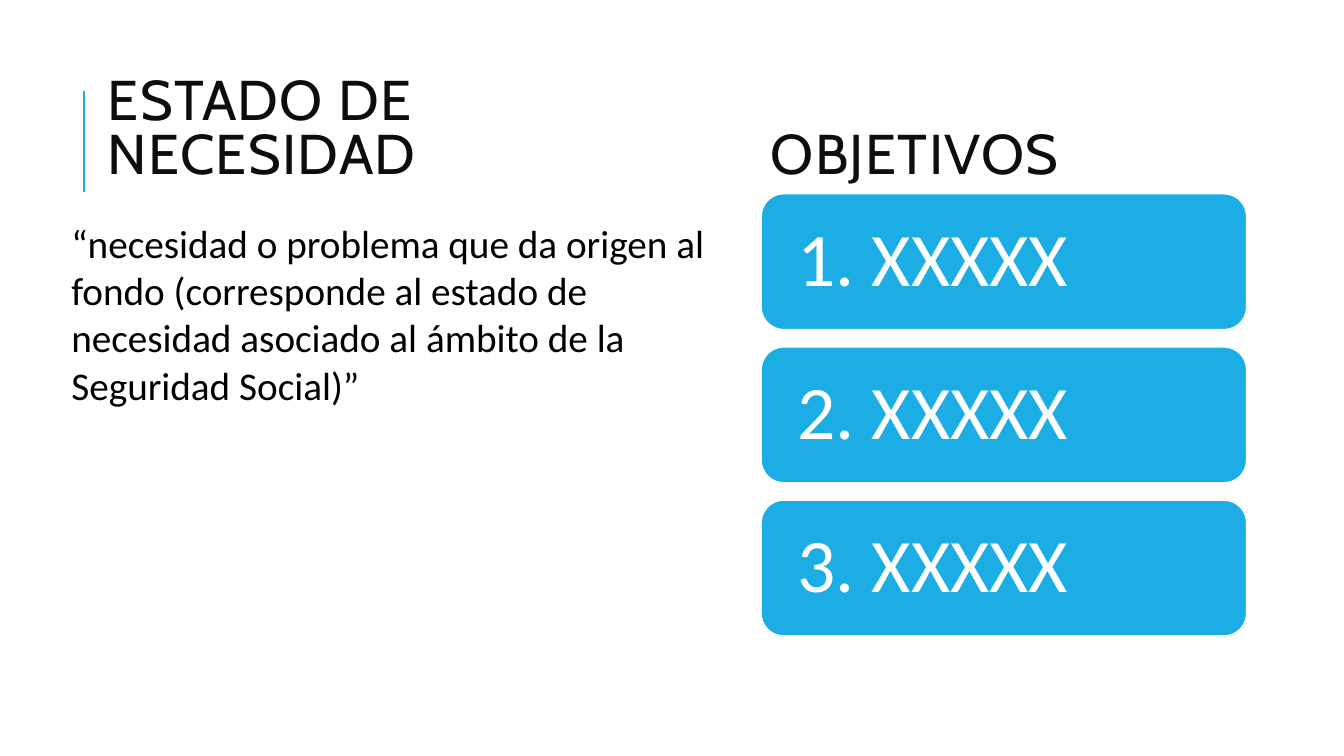
"""Build the slide on the state of need and its objectives."""
import pptx
import pptx.util
from pptx.dml.color import RGBColor
from pptx.enum.shapes import MSO_CONNECTOR, MSO_SHAPE
from pptx.enum.text import MSO_ANCHOR, MSO_AUTO_SIZE, PP_ALIGN
from pptx.oxml.xmlchemy import OxmlElement
from pptx.util import Cm

BLUE = RGBColor(0x1C, 0xAD, 0xE4)
WHITE = RGBColor(0xFF, 0xFF, 0xFF)
BLACK = RGBColor(0, 0, 0)
HEADING = RGBColor(0x0D, 0x0D, 0x0D)


def write(sp, text, font, size, color, anchor, spacing):
    tf = sp.text_frame
    tf.word_wrap = True
    tf.auto_size = MSO_AUTO_SIZE.NONE
    tf.vertical_anchor = anchor
    p = tf.paragraphs[0]
    p.text = text
    p.alignment = PP_ALIGN.LEFT
    p.line_spacing = spacing
    p.font.name = font
    p.font.size = pptx.util.Pt(size)
    p.font.color.rgb = color
    return p


prs = pptx.Presentation()
prs.slide_width, prs.slide_height = Cm(33.87), Cm(19.05)
s = prs.slides.add_slide(prs.slide_layouts[5])

rule = s.shapes.add_connector(MSO_CONNECTOR.STRAIGHT, Cm(2.12), Cm(4.83), Cm(2.12), Cm(2.29))
rule.line.color.rgb = BLUE
rule.line.width = pptx.util.Pt(1.5)
rule._element.spPr.append(OxmlElement("a:effectLst"))

title = s.shapes.title
title.left, title.top, title.width, title.height = Cm(2.46), Cm(2.11), Cm(12.6), Cm(2.69)
objectives = s.shapes.add_textbox(Cm(19.18), Cm(2.11), Cm(13.51), Cm(2.69))
for sp, text in ((title, "ESTADO DE NECESIDAD"), (objectives, "OBJETIVOS")):
    p = write(sp, text, "Cabin", 40, HEADING, MSO_ANCHOR.BOTTOM, 0.8)
    p.runs[0].font._element.set("spc", "100")

need = s.shapes.add_textbox(Cm(1.55), Cm(5.41), Cm(16.94), Cm(5.05))
write(need, "“necesidad o problema que da origen al fondo (corresponde al estado de "
      "necesidad asociado al ámbito de la Seguridad Social)”",
      "Calibri", 28, BLACK, MSO_ANCHOR.TOP, 1.0)

for i in range(3):
    sp = s.shapes.add_shape(MSO_SHAPE.ROUNDED_RECTANGLE,
                            Cm(19.18), Cm(4.88 + 3.86 * i), Cm(12.24), Cm(3.43))
    sp.shadow.inherit = False
    sp.fill.solid()
    sp.fill.fore_color.rgb = BLUE
    sp.line.color.rgb = WHITE
    sp.line.width = pptx.util.Pt(1.25)
    tf = sp.text_frame
    tf.margin_left = tf.margin_right = Cm(0.75)
    write(sp, f"{i + 1}. XXXXX", "Calibri", 54, WHITE, MSO_ANCHOR.MIDDLE, 0.9)

prs.save("out.pptx")
